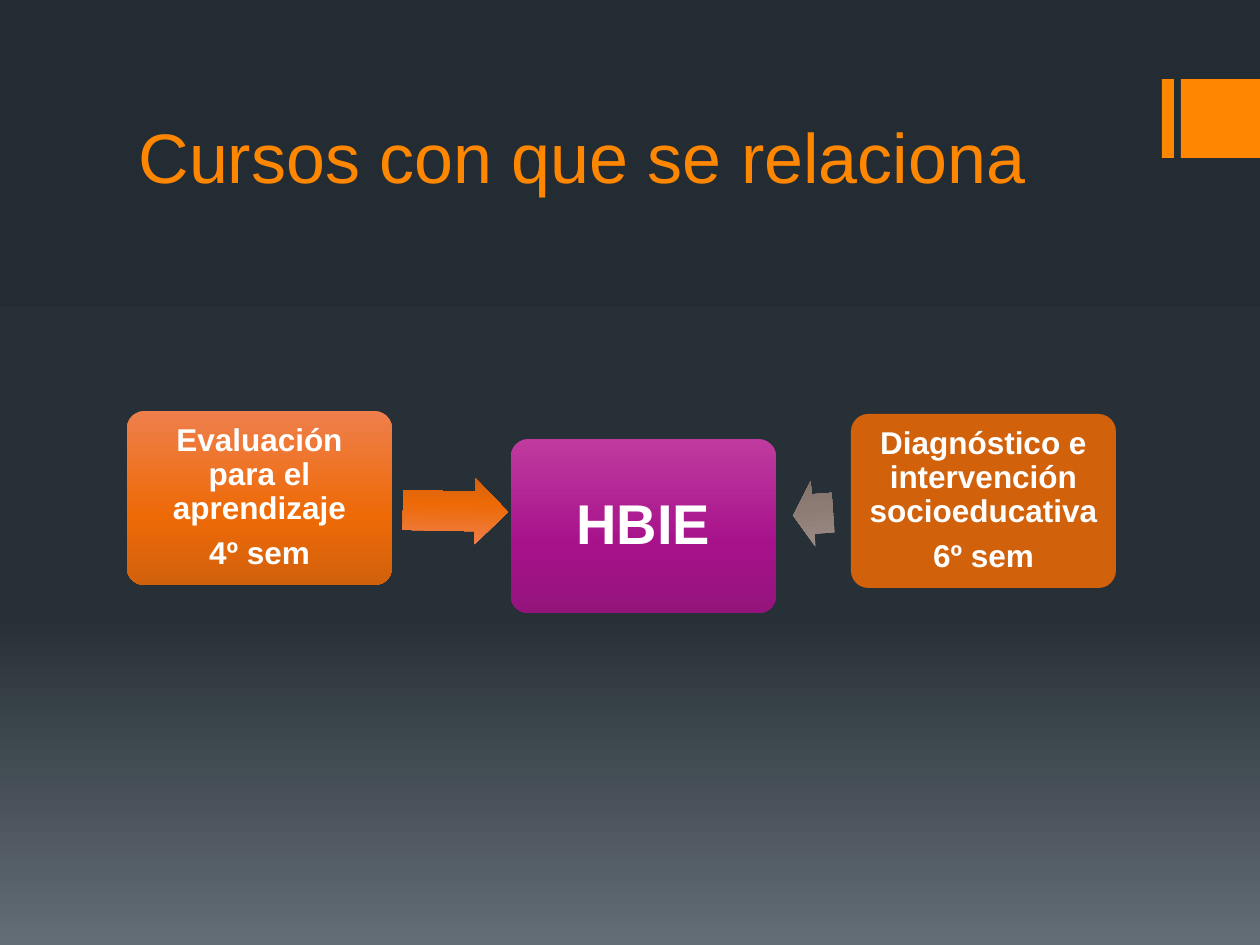
"""Build the slide that shows which courses relate to HBIE."""
import copy
import pptx
import pptx.util
import pptx.dml.color
import pptx.enum.shapes
import pptx.enum.text
import pptx.oxml.ns

PX = 914400 // 126
KIND = pptx.enum.shapes.MSO_SHAPE
ALIGN = pptx.enum.text.PP_ALIGN
ANCHOR = pptx.enum.text.MSO_ANCHOR


def paint(fill, node, tones):
    """Fill with one hex colour, or with a downward gradient of three."""
    rgb = pptx.dml.color.RGBColor.from_string
    if len(tones) == 1:
        fill.solid()
        fill.fore_color.rgb = rgb(tones[0])
        return
    fill.gradient()
    fill.gradient_angle = 270
    first = next(node.iter(pptx.oxml.ns.qn("a:gs")))
    first.addnext(copy.deepcopy(first))
    for stop, tone, spot in zip(fill.gradient_stops, tones, (0, 0.6, 1)):
        stop.color.rgb = rgb(tone)
        stop.position = spot


def write(frame, text, size=18, tone="FFFFFF", bold=True, align=ALIGN.CENTER,
          anchor=ANCHOR.MIDDLE, inset=None, line=0.9, after=0.35):
    """Set the text of a frame, one paragraph for each line."""
    frame.word_wrap = True
    frame.auto_size = pptx.enum.text.MSO_AUTO_SIZE.NONE
    frame.vertical_anchor = anchor
    if inset is not None:
        frame.margin_left = frame.margin_right = inset * PX
        frame.margin_top = frame.margin_bottom = inset * PX
    frame.text = text
    for para in frame.paragraphs:
        para.alignment = align
        para.line_spacing = line
        para.space_after = pptx.util.Pt(round(size * after, 1))
        font = para.runs[0].font
        font.name, font.size, font.bold = "Arial", pptx.util.Pt(size), bold
        font.color.rgb = pptx.dml.color.RGBColor.from_string(tone)


deck = pptx.Presentation()
deck.slide_width, deck.slide_height = 1260 * PX, 945 * PX
slide = deck.slides.add_slide(deck.slide_layouts[5])
back = slide.background.fill
paint(back, slide.element, ["242C33", "273037", "636D76"])
back.gradient_stops[1].position = 0.65

title = slide.shapes.title
title.left, title.top, title.width, title.height = [
    n * PX for n in (126, 45, 1008, 159)]
write(title.text_frame, "Cursos con que se relaciona", size=40, tone="FF8600",
      bold=False, align=ALIGN.LEFT, anchor=ANCHOR.BOTTOM, line=1.0, after=0)

ember = ["EE7F4C", "EE6A07", "D2610C"]
stone = ["9B8C86", "8D7C74", "80716A"]
plum = ["BF3B9F", "A7128B", "94147C"]
bar, box, arrow = KIND.RECTANGLE, KIND.ROUNDED_RECTANGLE, KIND.RIGHT_ARROW
parts = [
    (bar, (1162, 79, 12, 79), ["FF8600"], [], 0),
    (bar, (1181, 79, 79, 79), ["FF8600"], [], 0),
    (box, (127, 411, 265, 174), ember, [0.1], 0),
    (arrow, (403, 478, 105, 66), ember, [0.6, 0.5], 181.1),
    (box, (851, 414, 265, 174), ["D2610C"], [0.1], 0),
    (arrow, (793, 481, 40, 66), stone, [0.6, 0.5], 175.8),
    (box, (511, 439, 265, 174), plum, [0.1], 0),
]
made = []
for kind, place, tones, bends, turn in parts:
    shape = slide.shapes.add_shape(kind, *[n * PX for n in place])
    shape.shadow.inherit = False
    shape.line.fill.background()
    paint(shape.fill, shape.element, tones)
    for i, bend in enumerate(bends):
        shape.adjustments[i] = bend
    shape.rotation = turn
    made.append(shape)

made[3].element.spPr.xfrm.set("flipH", "1")
write(made[2].text_frame, "Evaluación para el aprendizaje\n4º sem", inset=9)
write(made[4].text_frame, "Diagnóstico e intervención socioeducativa\n6º sem",
      inset=9)
write(made[6].text_frame, "HBIE", size=32, inset=16)

deck.save("out.pptx")
